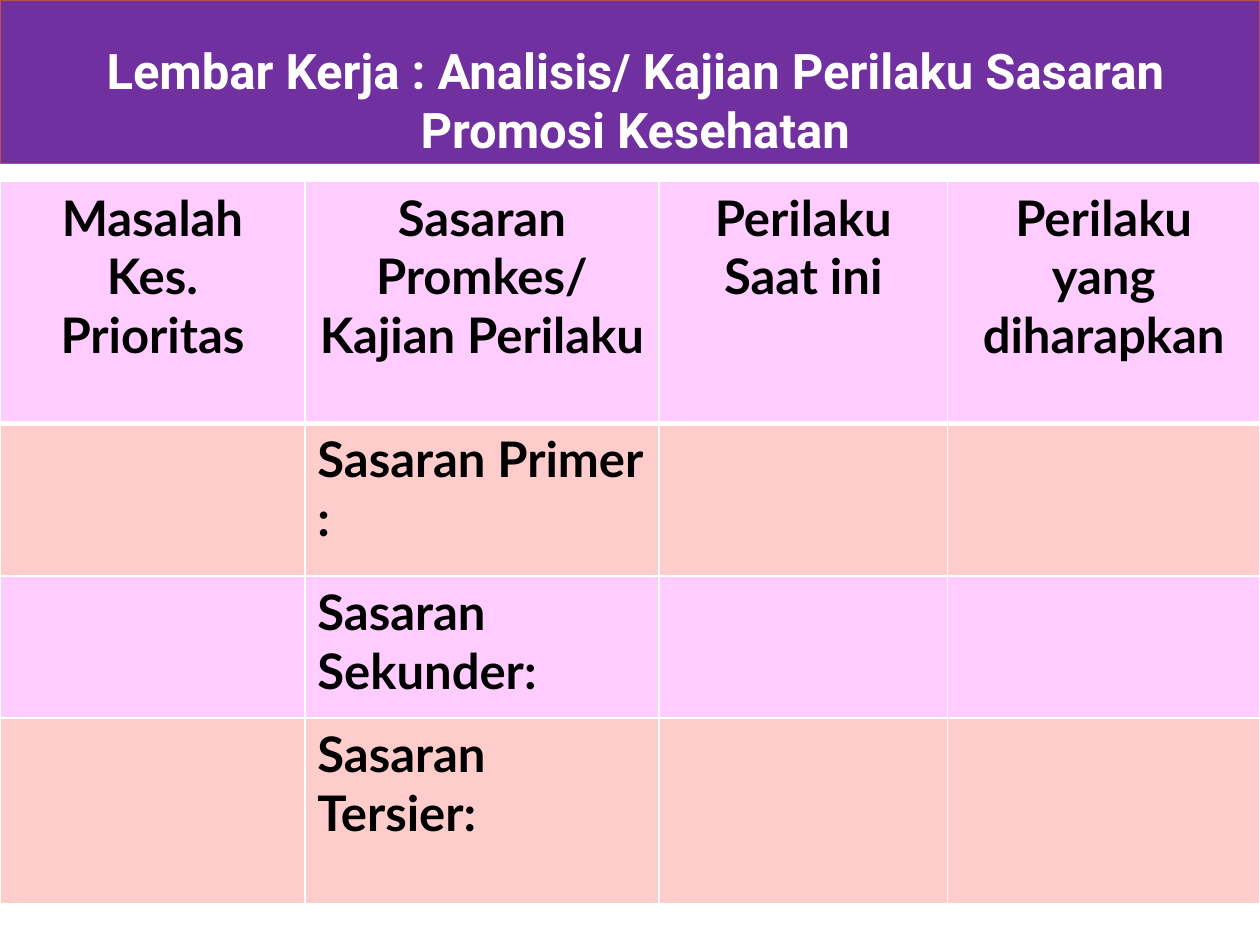
from lxml import etree
from pptx import Presentation
from pptx import util as u
from pptx.dml.color import RGBColor
from pptx.enum import shapes, text
from pptx.oxml.ns import qn

COLUMN_WIDTHS = [174.24, 202.32, 164.88, 178.56]
ROW_HEIGHTS = [138.24, 87.12, 81.36, 105.84]
ROW_FILLS = ["FFCCFF", "FFCCCC"]
HEADINGS = [
    "Masalah Kes. Prioritas",
    "Sasaran Promkes/ Kajian Perilaku",
    "Perilaku Saat ini",
    "Perilaku yang diharapkan",
]
TARGETS = ["Sasaran Primer :", "Sasaran Sekunder:", "Sasaran Tersier:"]


def color(code):
    return RGBColor.from_string(code)


def write(paragraph, words, font, code, align):
    paragraph.alignment = align
    run = paragraph.add_run()
    run.text = words
    run.font.name = font
    run.font.size = u.Pt(28)
    run.font.bold = True
    run.font.color.rgb = color(code)


def add_border(cell, side, width):
    properties = cell._tc.get_or_add_tcPr()
    border = etree.SubElement(properties, qn(f"a:ln{side}"), w=str(u.Pt(width)))
    fill = etree.SubElement(border, qn("a:solidFill"))
    etree.SubElement(fill, qn("a:srgbClr"), val="FFFFFF")


def style_cell(cell, row):
    widths = {"L": 1, "R": 1, "T": 3 if row == 1 else 1, "B": 3 if row == 0 else 1}
    for side, width in widths.items():
        add_border(cell, side, width)
    cell.fill.solid()
    cell.fill.fore_color.rgb = color(ROW_FILLS[row % 2])


def add_banner(slide):
    banner = slide.shapes.add_shape(
        shapes.MSO_SHAPE.RECTANGLE, u.Pt(0), u.Pt(0), u.Pt(720), u.Pt(93.6)
    )
    banner.shadow.inherit = False
    banner.fill.solid()
    banner.fill.fore_color.rgb = color("7030A0")
    banner.line.color.rgb = color("C0504D")
    banner.line.width = u.Pt(0.75)


def add_title(slide, words):
    title = slide.shapes.add_textbox(
        u.Pt(38.16), u.Pt(19.44), u.Pt(649.44), u.Pt(74.88)
    )
    frame = title.text_frame
    frame.word_wrap = True
    frame.auto_size = text.MSO_AUTO_SIZE.SHAPE_TO_FIT_TEXT
    write(frame.paragraphs[0], words, "Roboto", "FFFFFF", text.PP_ALIGN.CENTER)


def add_worksheet(slide):
    worksheet = slide.shapes.add_table(
        len(ROW_HEIGHTS), len(COLUMN_WIDTHS),
        u.Pt(0), u.Pt(103.68), u.Pt(sum(COLUMN_WIDTHS)), u.Pt(sum(ROW_HEIGHTS)),
    ).table
    for column, width in zip(worksheet.columns, COLUMN_WIDTHS):
        column.width = u.Pt(width)
    for row, height in enumerate(ROW_HEIGHTS):
        worksheet.rows[row].height = u.Pt(height)
        for cell in worksheet.rows[row].cells:
            style_cell(cell, row)
    for column, heading in enumerate(HEADINGS):
        paragraph = worksheet.cell(0, column).text_frame.paragraphs[0]
        write(paragraph, heading, "Lato", "000000", text.PP_ALIGN.CENTER)
    for row, target in enumerate(TARGETS, 1):
        paragraph = worksheet.cell(row, 1).text_frame.paragraphs[0]
        write(paragraph, target, "Lato", "000000", text.PP_ALIGN.LEFT)


def main():
    deck = Presentation()
    deck.slide_width, deck.slide_height = u.Pt(720), u.Pt(540)
    slide = deck.slides.add_slide(deck.slide_layouts[6])
    add_worksheet(slide)
    add_banner(slide)
    add_title(
        slide, "Lembar Kerja : Analisis/ Kajian Perilaku Sasaran Promosi Kesehatan"
    )
    deck.save("out.pptx")


if __name__ == "__main__":
    main()
